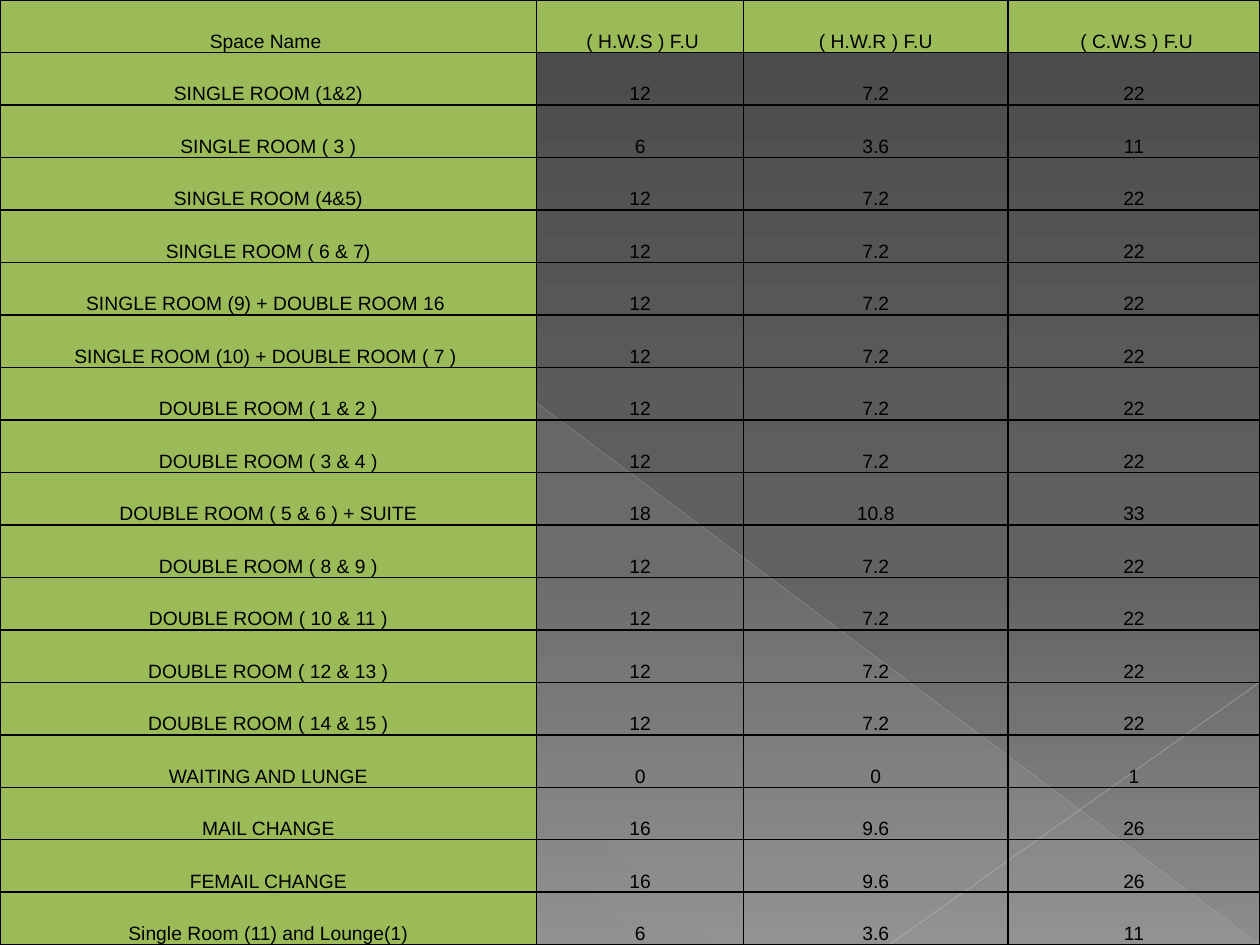
from pptx import Presentation
from pptx.dml.color import RGBColor
from pptx.enum.shapes import MSO_CONNECTOR, MSO_SHAPE
from pptx.enum.text import MSO_ANCHOR, PP_ALIGN
from pptx.oxml import parse_xml
from pptx.oxml.ns import nsdecls, qn
from pptx.util import Cm, Pt

STRAIGHT = MSO_CONNECTOR.STRAIGHT
RIGHT_TRIANGLE = MSO_SHAPE.RIGHT_TRIANGLE
BOTTOM = MSO_ANCHOR.BOTTOM
CENTER = PP_ALIGN.CENTER

WIDTH, HEIGHT = 25.4, 19.05
NO_TABLE_STYLE = "{2D5ABB26-0587-4C30-8999-92F81FD0307C}"
COLUMN_WIDTHS = (10.82, 4.17, 5.33, 5.08)
ROWS = (
    ("Space Name ", " ( H.W.S ) F.U", "( H.W.R ) F.U", " ( C.W.S ) F.U"),
    ("SINGLE ROOM (1&2)", "12", "7.2", "22"),
    ("SINGLE ROOM ( 3 )", "6", "3.6", "11"),
    ("SINGLE ROOM (4&5)", "12", "7.2", "22"),
    ("SINGLE ROOM ( 6 & 7)", "12", "7.2", "22"),
    ("SINGLE ROOM (9) + DOUBLE ROOM 16 ", "12", "7.2", "22"),
    ("SINGLE ROOM (10) + DOUBLE ROOM ( 7 ) ", "12", "7.2", "22"),
    ("DOUBLE ROOM ( 1 & 2 )", "12", "7.2", "22"),
    ("DOUBLE ROOM ( 3 & 4 )", "12", "7.2", "22"),
    ("DOUBLE ROOM ( 5 & 6 ) + SUITE", "18", "10.8", "33"),
    ("DOUBLE ROOM ( 8 & 9 )", "12", "7.2", "22"),
    ("DOUBLE ROOM ( 10 & 11 )", "12", "7.2", "22"),
    ("DOUBLE ROOM ( 12 & 13 )", "12", "7.2", "22"),
    ("DOUBLE ROOM ( 14 & 15 )", "12", "7.2", "22"),
    ("WAITING AND LUNGE", "0", "0", "1"),
    ("MAIL CHANGE", "16", "9.6", "26"),
    ("FEMAIL CHANGE", "16", "9.6", "26"),
    ("Single Room (11) and Lounge(1)", "6", "3.6", "11"),
)


def color(value):
    return RGBColor.from_string(value)


def alpha(opacity):
    return parse_xml(f'<a:alpha {nsdecls("a")} val="{opacity * 1000}"/>')


def set_gradient(holder, stops, angle):
    marks = "".join(
        f'<a:gs pos="{place * 1000}"><a:srgbClr val="{value}">'
        f'<a:alpha val="{opacity * 1000}"/></a:srgbClr></a:gs>'
        for place, value, opacity in stops
    )
    gradient = parse_xml(
        f'<a:gradFill {nsdecls("a")} rotWithShape="1"><a:gsLst>{marks}</a:gsLst>'
        f'<a:lin ang="{angle * 60000}" scaled="0"/></a:gradFill>'
    )
    holder.replace(holder.find(qn("a:solidFill")), gradient)


class SlidePainter:
    font = "Arial"
    size = 11
    ink = "000000"
    accent = "9BBB59"
    spacing = 1.15
    inset = 0.18

    def __init__(self, page):
        self.page = page

    def background(self, stops, angle):
        self.page.background.fill.solid()
        holder = self.page._element.find(".//" + qn("p:bgPr"))
        set_gradient(holder, stops, angle)

    def triangle(self, left, top, width, height, stops, angle):
        shape = self.page.shapes.add_shape(
            RIGHT_TRIANGLE, Cm(left), Cm(top), Cm(width), Cm(height)
        )
        shape.shadow.inherit = False
        shape.line.fill.background()
        shape.fill.solid()
        set_gradient(shape._element.spPr, stops, angle)

    def line(self, start, end, value, width, opacity):
        connector = self.page.shapes.add_connector(
            STRAIGHT, *(Cm(length) for length in (*start, *end))
        )
        connector.line.color.rgb = color(value)
        connector.line.width = Pt(width)
        properties = connector._element.spPr
        properties.find(".//" + qn("a:srgbClr")).append(alpha(opacity))
        properties.append(parse_xml(f'<a:effectLst {nsdecls("a")}/>'))

    def table(self, rows, widths, height):
        frame = self.page.shapes.add_table(
            len(rows), len(widths), Cm(0), Cm(0), Cm(sum(widths)), Cm(height)
        )
        table = frame.table
        table.first_row = False
        table.horz_banding = False
        table._tbl.tblPr.find(qn("a:tableStyleId")).text = NO_TABLE_STYLE
        for column, width in zip(table.columns, widths):
            column.width = Cm(width)
        for row_index, words in enumerate(rows):
            table.rows[row_index].height = Cm(height / len(rows))
            for column_index, text in enumerate(words):
                is_heading = row_index == 0 or column_index == 0
                self.cell(table.cell(row_index, column_index), text, is_heading)

    def cell(self, cell, text, is_heading):
        cell.vertical_anchor = BOTTOM
        cell.margin_left = cell.margin_right = Cm(self.inset)
        cell.margin_top = cell.margin_bottom = Cm(0)
        if is_heading:
            cell.fill.solid()
            cell.fill.fore_color.rgb = color(self.accent)
        else:
            cell.fill.background()
        self.borders(cell)
        para = cell.text_frame.paragraphs[0]
        para.alignment = CENTER
        para.line_spacing = self.spacing
        span = para.add_run()
        span.text = text
        span.font.name = self.font
        span.font.size = Pt(self.size)
        span.font.color.rgb = color(self.ink)

    def borders(self, cell):
        properties = cell._tc.get_or_add_tcPr()
        for index, side in enumerate("LRTB"):
            border = parse_xml(
                f'<a:ln{side} {nsdecls("a")} w="{Pt(1)}"><a:solidFill>'
                f'<a:srgbClr val="{self.ink}"/></a:solidFill></a:ln{side}>'
            )
            properties.insert(index, border)


def main():
    deck = Presentation()
    deck.slide_width = Cm(WIDTH)
    deck.slide_height = Cm(HEIGHT)
    painter = SlidePainter(deck.slides.add_slide(deck.slide_layouts[6]))
    painter.background(
        ((0, "4A4A4A", 100), (60, "626262", 100), (100, "8C8C8C", 100)), 90
    )
    painter.triangle(
        0.02, 0.04, 25.36, 19,
        ((0, "D2D2D2", 10), (70, "D2D2D2", 8), (100, "D2D2D2", 1)), 133,
    )
    painter.line((0, 0.02), (25.38, 19.03), "BFBFBF", 0.39, 35)
    painter.line((WIDTH, 13.75), (17.95, 19.03), "C6C6C6", 0.47, 45)
    painter.table(ROWS, COLUMN_WIDTHS, HEIGHT)
    deck.save("out.pptx")


if __name__ == "__main__":
    main()
